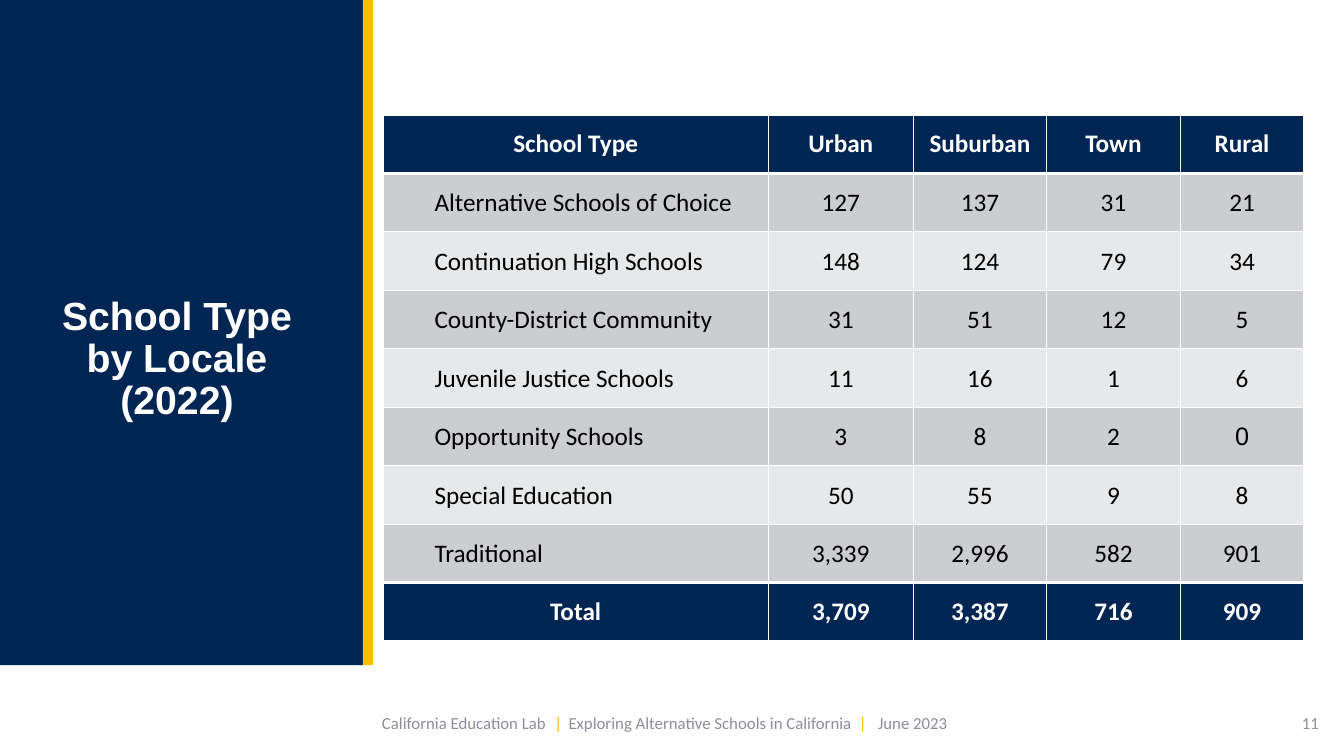
from dataclasses import dataclass

from lxml import etree
from pptx import Presentation
from pptx.dml.color import RGBColor
from pptx.enum.shapes import MSO_SHAPE
from pptx.enum.text import MSO_ANCHOR, PP_ALIGN
from pptx.oxml.ns import qn
from pptx.slide import Slide
from pptx.table import _Cell
from pptx.text.text import _Paragraph
from pptx.util import Pt

RECT = MSO_SHAPE.RECTANGLE
MIDDLE = MSO_ANCHOR.MIDDLE
LEFT, CENTER, RIGHT = PP_ALIGN.LEFT, PP_ALIGN.CENTER, PP_ALIGN.RIGHT

NAVY = RGBColor(0x01, 0x26, 0x54)
GOLD = RGBColor(0xFF, 0xBF, 0x00)
BAR_GOLD = RGBColor(0xFD, 0xBE, 0x00)
WHITE = RGBColor(0xFF, 0xFE, 0xFF)
BLACK = RGBColor(0x00, 0x00, 0x00)
GREY = RGBColor(0x8C, 0x8E, 0x99)
BAND_DARK = RGBColor(0xCC, 0xCD, 0xD1)
BAND_LIGHT = RGBColor(0xE7, 0xE8, 0xE9)

ARIAL, CALIBRI = "Arial", "Calibri"
PX = 9144


@dataclass(frozen=True)
class Box:
    """A rectangle in px."""
    left: int
    top: int
    width: int
    height: int

    def emu(self) -> tuple[int, int, int, int]:
        """Return the rectangle in EMU."""
        return self.left * PX, self.top * PX, self.width * PX, self.height * PX


@dataclass(frozen=True)
class Panel:
    """A plain filled rectangle."""
    box: Box
    color: RGBColor


@dataclass(frozen=True)
class TextStyle:
    """Font settings of a run."""
    size: int
    color: RGBColor
    font: str = CALIBRI
    bold: bool = False


@dataclass(frozen=True)
class TextLine:
    """One paragraph made of differently styled runs."""
    runs: tuple[tuple[str, TextStyle], ...]
    align: PP_ALIGN = LEFT
    spacing: int | None = None
    tabs: tuple[int, ...] = ()


@dataclass(frozen=True)
class TextBox:
    """A text box with vertically centred lines."""
    box: Box
    lines: tuple[TextLine, ...]
    insets: tuple[int, int] = (10, 5)


TITLE = TextStyle(28, WHITE, ARIAL, True)
FOOTER = TextStyle(12, GREY)
FOOTER_BAR = TextStyle(12, BAR_GOLD)
HEADING = TextStyle(18, WHITE, bold=True)
BODY = TextStyle(18, BLACK)
ZERO = TextStyle(18, BLACK, ARIAL)

PANELS = (
    Panel(Box(0, 0, 360, 660), NAVY),
    Panel(Box(360, 0, 10, 660), GOLD),
)
TEXTS = (
    TextBox(Box(20, 295, 311, 123), (
        TextLine((("School Type by Locale", TITLE),), CENTER, 30),
        TextLine((("(2022)", TITLE),), CENTER, 30),
    ), (40, 0)),
    TextBox(Box(369, 697, 595, 40), (
        TextLine((
            ("California Education Lab", FOOTER),
            ("\t|", FOOTER_BAR),
            ("\tExploring Alternative Schools in California", FOOTER),
            ("\t|", FOOTER_BAR),
            ("\tJune 2023", FOOTER),
        ), tabs=(171, 185, 473, 492)),
    )),
    TextBox(Box(1018, 697, 300, 40), (TextLine((("11", FOOTER),), RIGHT),)),
)

TABLE_BOX = Box(380, 114, 913, 522)
COLUMN_WIDTHS = (382, 144, 132, 133, 122)
ROWS = (
    ("School Type", "Urban", "Suburban", "Town", "Rural"),
    ("Alternative Schools of Choice", "127", "137", "31", "21"),
    ("Continuation High Schools", "148", "124", "79", "34"),
    ("County-District Community", "31", "51", "12", "5"),
    ("Juvenile Justice Schools", "11", "16", "1", "6"),
    ("Opportunity Schools", "3", "8", "2", "0"),
    ("Special Education", "50", "55", "9", "8"),
    ("Traditional", "3,339", "2,996", "582", "901"),
    ("Total", "3,709", "3,387", "716", "909"),
)
LAST_ROW = len(ROWS) - 1
THICK_RULES = (1, LAST_ROW)


def add_run(p: _Paragraph, text: str, style: TextStyle) -> None:
    """Add a styled run to a paragraph."""
    r = p.add_run()
    r.text = text
    r.font.size = Pt(style.size)
    r.font.name = style.font
    r.font.bold = style.bold
    r.font.color.rgb = style.color


def add_panel(s: Slide, panel: Panel) -> None:
    """Draw a filled rectangle."""
    sp = s.shapes.add_shape(RECT, *panel.box.emu())
    sp.shadow.inherit = False
    sp.fill.solid()
    sp.fill.fore_color.rgb = panel.color
    sp.line.fill.background()


def add_text(s: Slide, text: TextBox) -> None:
    """Draw a text box."""
    tf = s.shapes.add_textbox(*text.box.emu()).text_frame
    tf.word_wrap = True
    tf.vertical_anchor = MIDDLE
    tf.margin_left = tf.margin_right = text.insets[0] * PX
    tf.margin_top = tf.margin_bottom = text.insets[1] * PX
    for i, line in enumerate(text.lines):
        p = tf.add_paragraph() if i else tf.paragraphs[0]
        p.alignment = line.align
        if line.spacing:
            p.line_spacing = Pt(line.spacing)
        if line.tabs:
            tabs = etree.SubElement(p._p.get_or_add_pPr(), qn("a:tabLst"))
            for tab in line.tabs:
                etree.SubElement(tabs, qn("a:tab"), pos=str(tab * PX), algn="l")
        for content, style in line.runs:
            add_run(p, content, style)


def set_borders(cell: _Cell, row: int) -> None:
    """Rule a cell, with heavier lines beside the heading and total rows."""
    widths = {
        "L": 1,
        "R": 1,
        "T": 3 if row in THICK_RULES else 1,
        "B": 3 if row + 1 in THICK_RULES else 1,
    }
    tcPr = cell._tc.get_or_add_tcPr()
    for side, width in widths.items():
        ln = etree.SubElement(tcPr, qn(f"a:ln{side}"), w=str(Pt(width)))
        fill = etree.SubElement(ln, qn("a:solidFill"))
        etree.SubElement(fill, qn("a:srgbClr"), val=str(WHITE))


def fill_cell(cell: _Cell, row: int, column: int) -> None:
    """Write and format one cell according to its place in the table."""
    text = ROWS[row][column]
    strong = row in (0, LAST_ROW)
    set_borders(cell, row)
    cell.fill.solid()
    band = BAND_DARK if row % 2 else BAND_LIGHT
    cell.fill.fore_color.rgb = NAVY if strong else band
    cell.vertical_anchor = MIDDLE
    if row:
        cell.margin_left = cell.margin_right = cell.margin_top = PX
        cell.margin_bottom = 0
    p = cell.text_frame.paragraphs[0]
    if column == 0 and not strong:
        p.level = 1
        p.alignment = LEFT
        p._p.get_or_add_pPr().set("marL", str(50 * PX))
    else:
        p.alignment = CENTER
    body = ZERO if text == "0" else BODY
    add_run(p, text, HEADING if strong else body)


def add_locale_table(s: Slide) -> None:
    """Draw the table of school counts by locale."""
    frame = s.shapes.add_table(len(ROWS), len(COLUMN_WIDTHS), *TABLE_BOX.emu())
    table = frame.table
    table.last_row = True
    for column, width in zip(table.columns, COLUMN_WIDTHS):
        column.width = width * PX
    for row in range(len(ROWS)):
        for column in range(len(COLUMN_WIDTHS)):
            fill_cell(table.cell(row, column), row, column)


def main() -> None:
    """Build the slide and save it."""
    prs = Presentation()
    prs.slide_width, prs.slide_height = 1333 * PX, 750 * PX
    s = prs.slides.add_slide(prs.slide_layouts[6])
    s.background.fill.solid()
    s.background.fill.fore_color.rgb = WHITE
    for panel in PANELS:
        add_panel(s, panel)
    add_locale_table(s)
    for text in TEXTS:
        add_text(s, text)
    prs.save("out.pptx")


if __name__ == "__main__":
    main()
